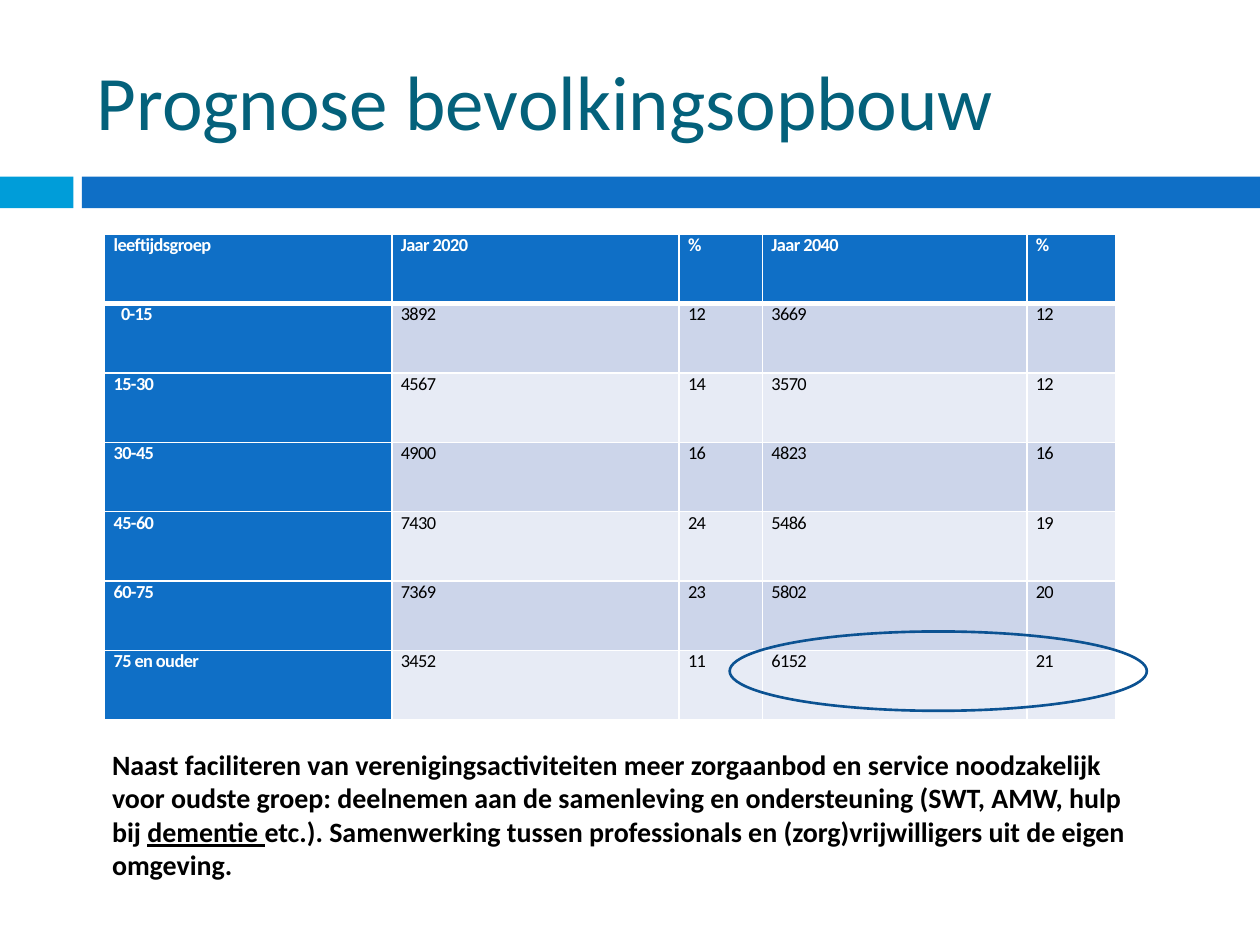
from dataclasses import dataclass

from lxml.etree import SubElement
from pptx import Presentation
from pptx.dml.color import RGBColor
from pptx.enum.shapes import MSO_SHAPE
from pptx.enum.text import MSO_ANCHOR
from pptx.oxml.ns import qn
from pptx.util import Cm, Pt


@dataclass(frozen=True)
class Theme:
    font: str = "Calibri"
    title: str = "04617B"
    blue: str = "0F6FC6"
    cyan: str = "009DD9"
    outline: str = "0B5292"
    band_dark: str = "CCD5EA"
    band_light: str = "E7EBF5"
    white: str = "FFFFFF"
    black: str = "000000"
    title_size: float = 44
    body_size: float = 16
    table_size: float = 10.5


THEME = Theme()

HEADER = ["leeftijdsgroep", "Jaar 2020", "%", "Jaar 2040", "%"]
AGE_GROUPS = [
    ["0-15", "3892", "12", "3669", "12"],
    ["15-30", "4567", "14", "3570", "12"],
    ["30-45", "4900", "16", "4823", "16"],
    ["45-60", "7430", "24", "5486", "19"],
    ["60-75", "7369", "23", "5802", "20"],
    ["75 en ouder", "3452", "11", "6152", "21"],
]
COLUMN_WIDTHS = [5.79, 5.79, 1.68, 5.33, 1.8]
ROW_HEIGHT = 1.4
CONCLUSION = [
    ("Naast faciliteren van verenigingsactiviteiten meer zorgaanbod en service "
     "noodzakelijk voor oudste groep: deelnemen aan de samenleving en "
     "ondersteuning (SWT, AMW, hulp bij ", False),
    ("dementie ", True),
    ("etc.). Samenwerking tussen professionals en (zorg)vrijwilligers uit de "
     "eigen omgeving.", False),
]


def add_text(paragraph, text, *, size, color, bold=False, underline=False, spacing=None):
    run = paragraph.add_run()
    run.text = text
    font = run.font
    font.name = THEME.font
    font.size = Pt(size)
    font.bold = bold
    font.underline = underline
    font.color.rgb = RGBColor.from_string(color)
    if spacing is not None:
        # Character spacing is stored in hundredths of a point
        run.font._element.set("spc", str(round(spacing * 100)))


def add_text_box(slide, left, top, width, height, anchor=MSO_ANCHOR.TOP):
    frame = slide.shapes.add_textbox(Cm(left), Cm(top), Cm(width), Cm(height)).text_frame
    frame.word_wrap = True
    frame.vertical_anchor = anchor
    return frame.paragraphs[0]


def add_plain_shape(slide, kind, left, top, width, height, fill=None, line=None):
    shape = slide.shapes.add_shape(kind, Cm(left), Cm(top), Cm(width), Cm(height))
    shape.shadow.inherit = False
    if fill:
        shape.fill.solid()
        shape.fill.fore_color.rgb = RGBColor.from_string(fill)
    else:
        shape.fill.background()
    if line:
        shape.line.color.rgb = RGBColor.from_string(line)
        shape.line.width = Pt(1.5)
    else:
        shape.line.fill.background()


def set_borders(cell, top, bottom):
    properties = cell._tc.get_or_add_tcPr()
    for side, width in (("lnL", 1), ("lnR", 1), ("lnT", top), ("lnB", bottom)):
        border = SubElement(properties, qn(f"a:{side}"), w=str(Pt(width)))
        fill = SubElement(border, qn("a:solidFill"))
        SubElement(fill, qn("a:srgbClr"), val=THEME.white)


def fill_cell(cell, text, row, column):
    is_heading = row == 0 or column == 0
    band = THEME.band_dark if row % 2 else THEME.band_light
    set_borders(cell, top=3 if row == 1 else 1, bottom=3 if row == 0 else 1)
    cell.fill.solid()
    cell.fill.fore_color.rgb = RGBColor.from_string(THEME.blue if is_heading else band)
    cell.margin_left = cell.margin_right = Cm(0.18)
    cell.margin_top = cell.margin_bottom = 0
    add_text(cell.text_frame.paragraphs[0], text, size=THEME.table_size, bold=is_heading,
             color=THEME.white if is_heading else THEME.black, spacing=-0.3)


def add_population_table(slide, left, top):
    rows = [HEADER] + AGE_GROUPS
    table = slide.shapes.add_table(
        len(rows), len(HEADER), Cm(left), Cm(top),
        Cm(sum(COLUMN_WIDTHS)), Cm(ROW_HEIGHT * len(rows))).table
    table.first_row = table.horz_banding = False
    for column, width in zip(table.columns, COLUMN_WIDTHS):
        column.width = Cm(width)
    for row, values in enumerate(rows):
        table.rows[row].height = Cm(ROW_HEIGHT)
        for column, text in enumerate(values):
            fill_cell(table.cell(row, column), text, row, column)
    # The youngest group is slightly indented
    table.cell(1, 0).margin_left = Cm(0.33)


def main():
    presentation = Presentation()
    presentation.slide_width = Cm(25.4)
    presentation.slide_height = Cm(19.05)
    slide = presentation.slides.add_slide(presentation.slide_layouts[6])

    # Bars under the title
    add_plain_shape(slide, MSO_SHAPE.RECTANGLE, 0, 3.56, 1.48, 0.64, fill=THEME.cyan)
    add_plain_shape(slide, MSO_SHAPE.RECTANGLE, 1.65, 3.56, 23.75, 0.64, fill=THEME.blue)

    # Title
    title = add_text_box(slide, 1.7, 0.64, 22.66, 2.74, MSO_ANCHOR.MIDDLE)
    add_text(title, "Prognose bevolkingsopbouw", size=THEME.title_size, color=THEME.title)

    # Forecast by age group
    add_population_table(slide, 2.11, 4.72)

    # Conclusion
    conclusion = add_text_box(slide, 2.01, 14.94, 21.21, 3)
    for text, underline in CONCLUSION:
        add_text(conclusion, text, size=THEME.body_size, color=THEME.black,
                 bold=True, underline=underline)

    # Emphasis on the oldest group in 2040
    add_plain_shape(slide, MSO_SHAPE.OVAL, 14.71, 12.73, 8.41, 1.6, line=THEME.outline)

    presentation.save("out.pptx")


if __name__ == "__main__":
    main()
